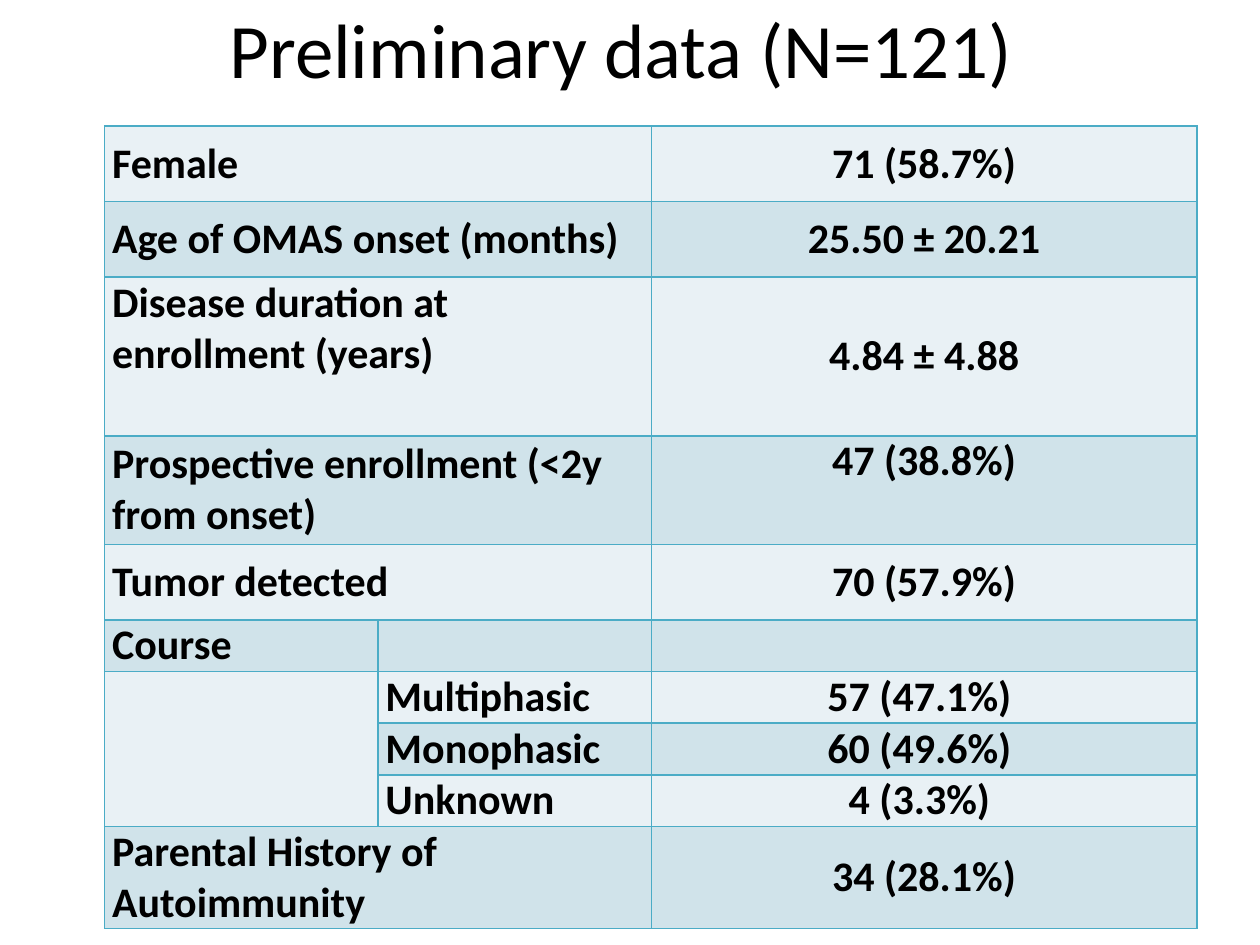
from typing import NamedTuple

import lxml.etree
import pptx
import pptx.dml.color
import pptx.enum.text
import pptx.oxml.ns
import pptx.table
import pptx.text.text
import pptx.util

Inches = pptx.util.Inches
Pt = pptx.util.Pt
Align = pptx.enum.text.PP_ALIGN
Anchor = pptx.enum.text.MSO_ANCHOR

FONT = "Calibri"
BLACK = "000000"
BORDER = "4BACC6"
BANDS = ("E9F1F5", "D0E3EA")
COLUMN_WIDTHS = (2.17, 2.17, 4.33)


class Row(NamedTuple):
    label: str
    value: str
    height: float
    sublabel: str = ""
    spans_labels: bool = True
    label_anchor: Anchor = Anchor.MIDDLE
    value_anchor: Anchor = Anchor.MIDDLE


def course_row(label: str, sublabel: str, value: str) -> Row:
    return Row(label, value, 0.41, sublabel, spans_labels=False)


ROWS = (
    Row("Female\u00a0", "71 (58.7%)", 0.6),
    Row("Age of OMAS onset (months)", "25.50 ± 20.21", 0.6),
    Row("Disease duration at enrollment (years)", "4.84 ± 4.88", 1.26,
        label_anchor=Anchor.TOP),
    Row("Prospective enrollment\u00a0(<2y from onset)", "47 (38.8%)", 0.86,
        value_anchor=Anchor.TOP),
    Row("Tumor detected\u00a0", "70 (57.9%)", 0.6),
    course_row("Course", "", ""),
    course_row("", "Multiphasic", "57 (47.1%) "),
    course_row("", "Monophasic", "60 (49.6%) "),
    course_row("", "Unknown", "4 (3.3%) "),
    Row("Parental History of Autoimmunity", "34 (28.1%)", 0.81),
)
FIRST_COURSE, LAST_COURSE = 6, 8


def color(value: str) -> pptx.dml.color.RGBColor:
    return pptx.dml.color.RGBColor.from_string(value)


def add_span(para: pptx.text.text._Paragraph, text: str, size: float,
             bold: bool = False) -> None:
    span = para.add_run()
    span.text = text
    span.font.name = FONT
    span.font.size = Pt(size)
    span.font.bold = bold
    span.font.color.rgb = color(BLACK)


def add_borders(cell: pptx.table._Cell) -> None:
    """Put a thin line on each side, ahead of the fill as the schema asks."""
    properties = cell._tc.get_or_add_tcPr()
    for position, side in enumerate(("a:lnL", "a:lnR", "a:lnT", "a:lnB")):
        line = lxml.etree.Element(pptx.oxml.ns.qn(side), w=str(Pt(1)))
        fill = lxml.etree.SubElement(line, pptx.oxml.ns.qn("a:solidFill"))
        lxml.etree.SubElement(fill, pptx.oxml.ns.qn("a:srgbClr"), val=BORDER)
        properties.insert(position, line)


def fill_cell(cell: pptx.table._Cell, text: str, band: str, align: Align,
              anchor: Anchor) -> None:
    cell.margin_left = cell.margin_right = Inches(0.06)
    cell.margin_top = cell.margin_bottom = 0
    cell.vertical_anchor = anchor
    cell.fill.solid()
    cell.fill.fore_color.rgb = color(band)
    add_borders(cell)
    if text:
        para = cell.text_frame.paragraphs[0]
        para.alignment = align
        para.space_after = Pt(3)
        add_span(para, text, 24, bold=True)


def add_title(page: pptx.slide.Slide, text: str) -> None:
    box = page.shapes.add_textbox(Inches(0.5), Inches(-0.25), Inches(9), Inches(1.25))
    box.text_frame.word_wrap = True
    box.text_frame.vertical_anchor = Anchor.MIDDLE
    para = box.text_frame.paragraphs[0]
    para.alignment = Align.CENTER
    add_span(para, text, 44)


def add_data_table(page: pptx.slide.Slide) -> None:
    table = page.shapes.add_table(
        len(ROWS), len(COLUMN_WIDTHS), Inches(0.83), Inches(1),
        Inches(sum(COLUMN_WIDTHS)), Inches(sum(row.height for row in ROWS))).table
    table.first_row = table.horz_banding = False
    for column, width in zip(table.columns, COLUMN_WIDTHS):
        column.width = Inches(width)
    for index, row in enumerate(ROWS):
        table.rows[index].height = Inches(row.height)
        band = BANDS[index % 2]
        label, sublabel, value = table.rows[index].cells
        fill_cell(label, row.label, band, Align.LEFT, row.label_anchor)
        fill_cell(sublabel, row.sublabel, band, Align.LEFT, Anchor.MIDDLE)
        fill_cell(value, row.value, band, Align.CENTER, row.value_anchor)
        if row.spans_labels:
            label.merge(sublabel)
    table.cell(FIRST_COURSE, 0).merge(table.cell(LAST_COURSE, 0))


def main() -> None:
    deck = pptx.Presentation()
    deck.slide_width, deck.slide_height = Inches(10), Inches(7.5)
    page = deck.slides.add_slide(deck.slide_layouts[6])
    add_title(page, "Preliminary data (N=121) ")
    add_data_table(page)
    deck.save("out.pptx")


if __name__ == "__main__":
    main()
